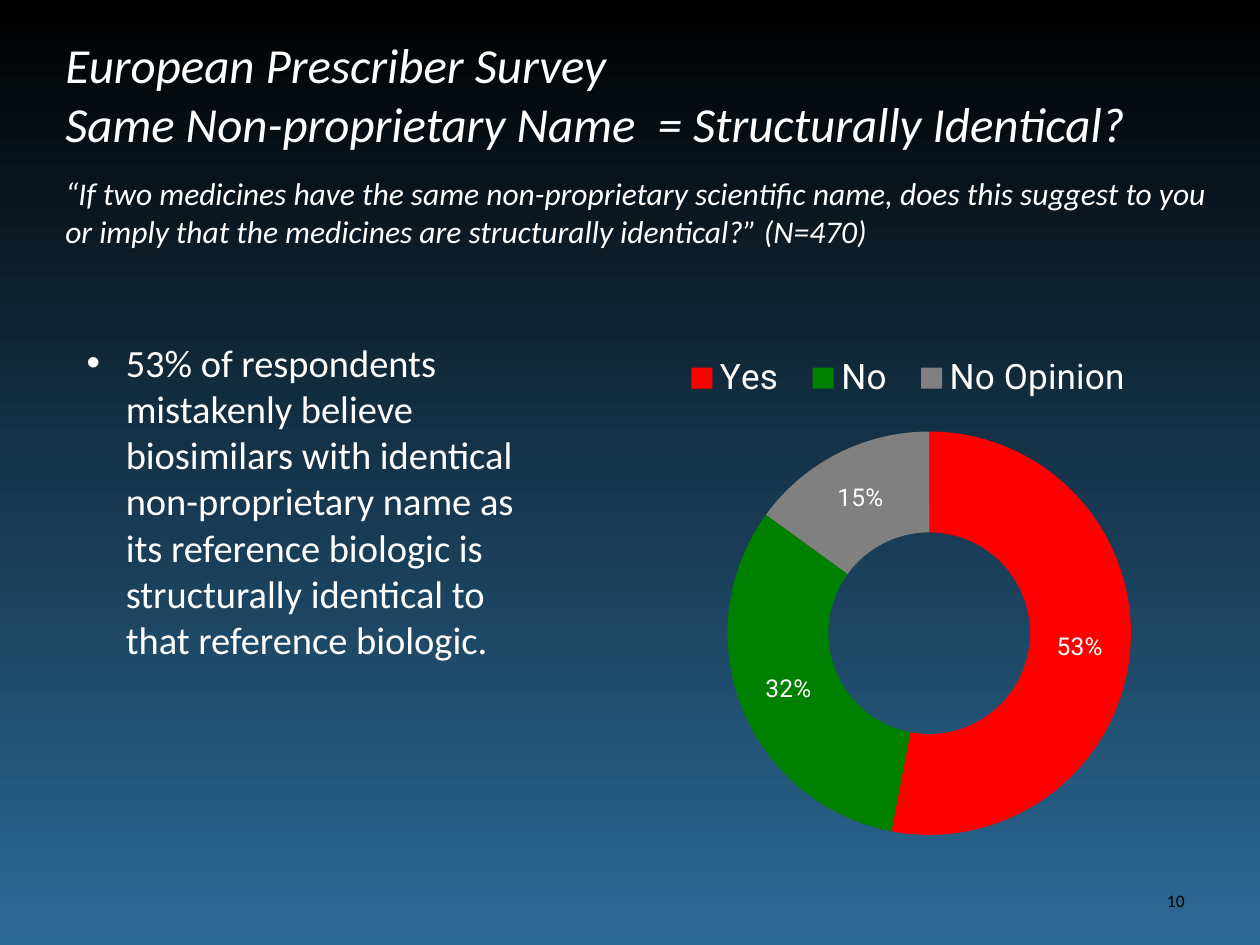
from lxml import etree
from pptx import Presentation
from pptx.chart.data import CategoryChartData
from pptx.dml.color import RGBColor
from pptx.enum import chart as ch, text
from pptx.oxml.ns import qn
from pptx.util import Inches, Pt

WHITE = RGBColor(0xFF, 0xFF, 0xFF)
BLACK = RGBColor(0, 0, 0)
BLUE = RGBColor(0x2C, 0x6A, 0x96)
RED = RGBColor(0xFF, 0, 0)
GREEN = RGBColor(0, 0x80, 0)
GREY = RGBColor(0x80, 0x80, 0x80)

ANSWERS = [("Yes", 0.53, RED), ("No", 0.32, GREEN), ("No Opinion", 0.15, GREY)]


def paint_background(slide):
    fill = slide.background.fill
    fill.gradient()
    fill.gradient_angle = 90
    for stop, position, color in zip(fill.gradient_stops, (0, 1), (BLUE, BLACK)):
        stop.position = position
        stop.color.rgb = color


def add_text(slide, box, lines, size, color=WHITE, italic=False,
             align=text.PP_ALIGN.LEFT, anchor=text.MSO_ANCHOR.TOP):
    """Place one paragraph per line in the box and return the paragraphs."""
    frame = slide.shapes.add_textbox(*map(Inches, box)).text_frame
    frame.word_wrap = True
    frame.vertical_anchor = anchor
    frame.text = "\n".join(lines)
    for paragraph in frame.paragraphs:
        paragraph.alignment = align
        font = paragraph.font
        font.name, font.size, font.italic = "Calibri", Pt(size), italic
        font.color.rgb = color
    return frame.paragraphs


def add_finding(slide, box, finding):
    paragraph = add_text(slide, box, [finding], 22)[0]
    paragraph.space_before = Pt(18)
    properties = paragraph._p.get_or_add_pPr()
    properties.set("marL", str(Inches(0.31)))
    properties.set("indent", str(-Inches(0.31)))
    bullet_font = etree.Element(qn("a:buFont"), typeface="Arial")
    bullet = etree.Element(qn("a:buChar"), char="•")
    properties.find(qn("a:spcBef")).addnext(bullet_font)
    bullet_font.addnext(bullet)


def set_layout(parent, index, x, y, w, h, inner=False):
    """Fix a chart part's place as fractions of the chart."""
    old = parent.find(qn("c:layout"))
    if old is not None:
        parent.remove(old)
    layout = etree.Element(qn("c:layout"))
    manual = etree.SubElement(layout, qn("c:manualLayout"))
    settings = [("xMode", "edge"), ("yMode", "edge"),
                ("x", x), ("y", y), ("w", w), ("h", h)]
    if inner:
        settings.insert(0, ("layoutTarget", "inner"))
    for tag, value in settings:
        etree.SubElement(manual, qn(f"c:{tag}"), val=str(value))
    parent.insert(index, layout)


def add_answer_chart(slide, box):
    names, shares, colors = zip(*ANSWERS)
    data = CategoryChartData(number_format="0%")
    data.categories = names
    data.add_series("Series 1", shares)
    chart = slide.shapes.add_chart(
        ch.XL_CHART_TYPE.DOUGHNUT, *map(Inches, box), data).chart
    chart.has_title = False
    chart.font.name, chart.font.size = "Roboto", Pt(8)

    chart.has_legend = True
    legend = chart.legend
    legend.position = ch.XL_LEGEND_POSITION.TOP
    legend.include_in_layout = False
    legend.font.name, legend.font.size = "Roboto", Pt(20)
    legend.font.color.rgb = WHITE
    set_layout(legend._element, 1, 0.19, 0.04, 0.57, 0.1)

    plot = chart.plots[0]
    plot.vary_by_categories = True
    plot.has_data_labels = True
    labels = plot.data_labels
    labels.show_value, labels.show_percentage = True, False
    labels.number_format, labels.number_format_is_linked = "0%", False
    labels.font.name, labels.font.size = "Roboto", Pt(14)
    labels.font.color.rgb = WHITE
    for index, color in enumerate(colors):
        slice_format = plot.series[0].points[index].format
        slice_format.fill.solid()
        slice_format.fill.fore_color.rgb = color
        slice_format.line.fill.background()
    plot_area = chart._chartSpace.chart.plotArea
    set_layout(plot_area, 0, 0.26, 0.23, 0.48, 0.81, inner=True)


def main():
    prs = Presentation()
    prs.slide_width, prs.slide_height = Inches(10), Inches(7.5)
    slide = prs.slides.add_slide(prs.slide_layouts[6])
    paint_background(slide)
    add_text(slide, (7.17, 6.95, 2.33, 0.4), ["10"], 10, BLACK,
             align=text.PP_ALIGN.RIGHT, anchor=text.MSO_ANCHOR.MIDDLE)
    add_answer_chart(slide, (4.04, 2.64, 6.67, 4.01))
    add_text(slide, (0.42, 0.31, 10, 0.87),
             ["European Prescriber Survey",
              "Same Non-proprietary Name  = Structurally Identical?"],
             28, italic=True, anchor=text.MSO_ANCHOR.MIDDLE)
    add_text(slide, (0.42, 1.33, 9.37, 0.71),
             ["“If two medicines have the same non-proprietary scientific name, "
              "does this suggest to you or imply that the medicines are "
              "structurally identical?” (N=470)"], 18, italic=True)
    add_finding(slide, (0.59, 2.64, 3.7, 2.69),
                "53% of respondents mistakenly believe biosimilars with identical "
                "non-proprietary name as its reference biologic is structurally "
                "identical to that reference biologic.")
    prs.save("out.pptx")


if __name__ == "__main__":
    main()
